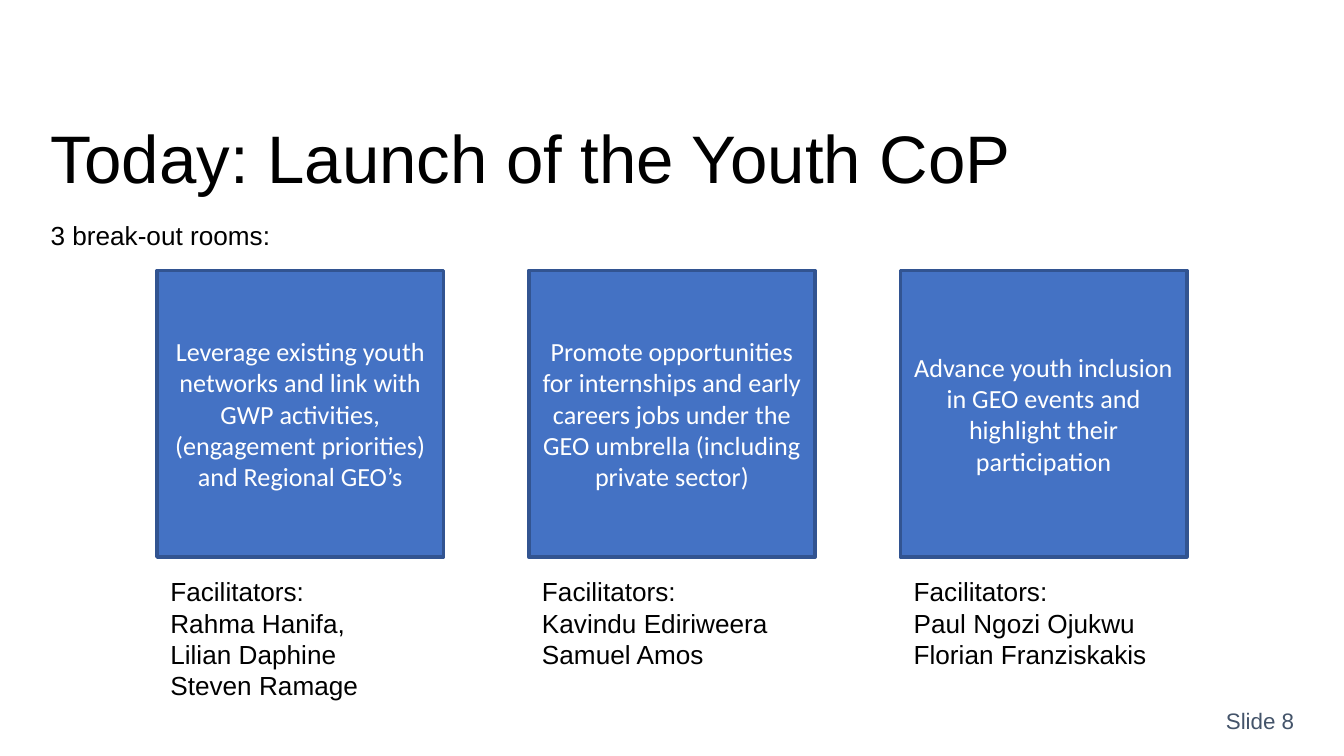
from pptx import Presentation
from pptx.dml.color import RGBColor
from pptx.enum.shapes import MSO_SHAPE
from pptx.enum.text import MSO_ANCHOR, MSO_AUTO_SIZE, PP_ALIGN
from pptx.util import Pt

LEFT, CENTER, RIGHT = PP_ALIGN.LEFT, PP_ALIGN.CENTER, PP_ALIGN.RIGHT
TOP, MIDDLE = MSO_ANCHOR.TOP, MSO_ANCHOR.MIDDLE
RECTANGLE = MSO_SHAPE.RECTANGLE
NO_AUTOFIT = MSO_AUTO_SIZE.NONE
TITLE_ONLY = 5

TITLE = "Today: Launch of the Youth CoP"
INTRO = "3 break-out rooms:"
SLIDE_LABEL = "Slide 8"
ROOMS = [
    ("Leverage existing youth networks and link with GWP activities, "
     "(engagement priorities) and Regional GEO’s",
     ["Rahma Hanifa,", "Lilian Daphine", "Steven Ramage"]),
    ("Promote opportunities for internships and early careers jobs under the "
     "GEO umbrella (including private sector)",
     ["Kavindu Ediriweera", "Samuel Amos"]),
    ("Advance youth inclusion in GEO events and highlight their participation",
     ["Paul Ngozi Ojukwu", "Florian Franziskakis"]),
]

THEME = {
    "fill": RGBColor(0x44, 0x72, 0xC4),
    "line": RGBColor(0x32, 0x54, 0x91),
    "title": {"name": "Arial", "size": Pt(36), "color": RGBColor(0, 0, 0)},
    "body": {"name": "Arial", "size": Pt(14), "color": RGBColor(0, 0, 0)},
    "room": {"name": "Calibri", "size": Pt(14), "color": RGBColor(255, 255, 255)},
    "label": {"name": "Arial", "size": Pt(12), "color": RGBColor(0x44, 0x54, 0x6A)},
}

MARGIN = 20
CONTENT_WIDTH = 680
ROOM_LEFT, ROOM_TOP, ROOM_SIZE, ROOM_PITCH = 84.2, 145, 153.4, 199.1
FACILITATOR_TOP, FACILITATOR_HEIGHT = 304.8, 75


def write(shape, lines, style, align=LEFT, anchor=TOP, spacing=None):
    frame = shape.text_frame
    settings = {
        "word_wrap": True, "auto_size": NO_AUTOFIT, "vertical_anchor": anchor,
        "margin_left": Pt(7.2), "margin_right": Pt(7.2),
        "margin_top": Pt(3.6), "margin_bottom": Pt(3.6),
    }
    for name, value in settings.items():
        setattr(frame, name, value)
    frame.text = "\n".join(lines)
    for para in frame.paragraphs:
        para.alignment = align
        para.line_spacing = spacing
        for name, value in THEME[style].items():
            if name == "color":
                para.font.color.rgb = value
            else:
                setattr(para.font, name, value)


def add_text(slide, bounds, lines, style, **options):
    box = slide.shapes.add_textbox(*map(Pt, bounds))
    write(box, lines, style, **options)


def add_room(slide, left, topic, facilitators):
    square = slide.shapes.add_shape(
        RECTANGLE, Pt(left), Pt(ROOM_TOP), Pt(ROOM_SIZE), Pt(ROOM_SIZE))
    square.shadow.inherit = False
    square.fill.solid()
    square.fill.fore_color.rgb = THEME["fill"]
    square.line.color.rgb = THEME["line"]
    square.line.width = Pt(2)
    write(square, [topic], "room", align=CENTER, anchor=MIDDLE)
    add_text(slide, (left, FACILITATOR_TOP, ROOM_SIZE, FACILITATOR_HEIGHT),
             ["Facilitators:", *facilitators], "body", spacing=Pt(16.8))


def main():
    deck = Presentation()
    deck.slide_width, deck.slide_height = Pt(720), Pt(405)
    slide = deck.slides.add_slide(deck.slide_layouts[TITLE_ONLY])

    title = slide.shapes.title
    title.left, title.top = Pt(MARGIN), Pt(66)
    title.width, title.height = Pt(CONTENT_WIDTH), Pt(41)
    write(title, [TITLE], "title", anchor=MIDDLE, spacing=0.9)

    add_text(slide, (MARGIN, 113.8, 133, 24), [INTRO], "body", spacing=Pt(16.8))
    for index, (topic, facilitators) in enumerate(ROOMS):
        add_room(slide, ROOM_LEFT + index * ROOM_PITCH, topic, facilitators)
    add_text(slide, (592.5, 375, 108, 21.6), [SLIDE_LABEL], "label",
             align=RIGHT, anchor=MIDDLE)

    deck.save("out.pptx")


if __name__ == "__main__":
    main()
